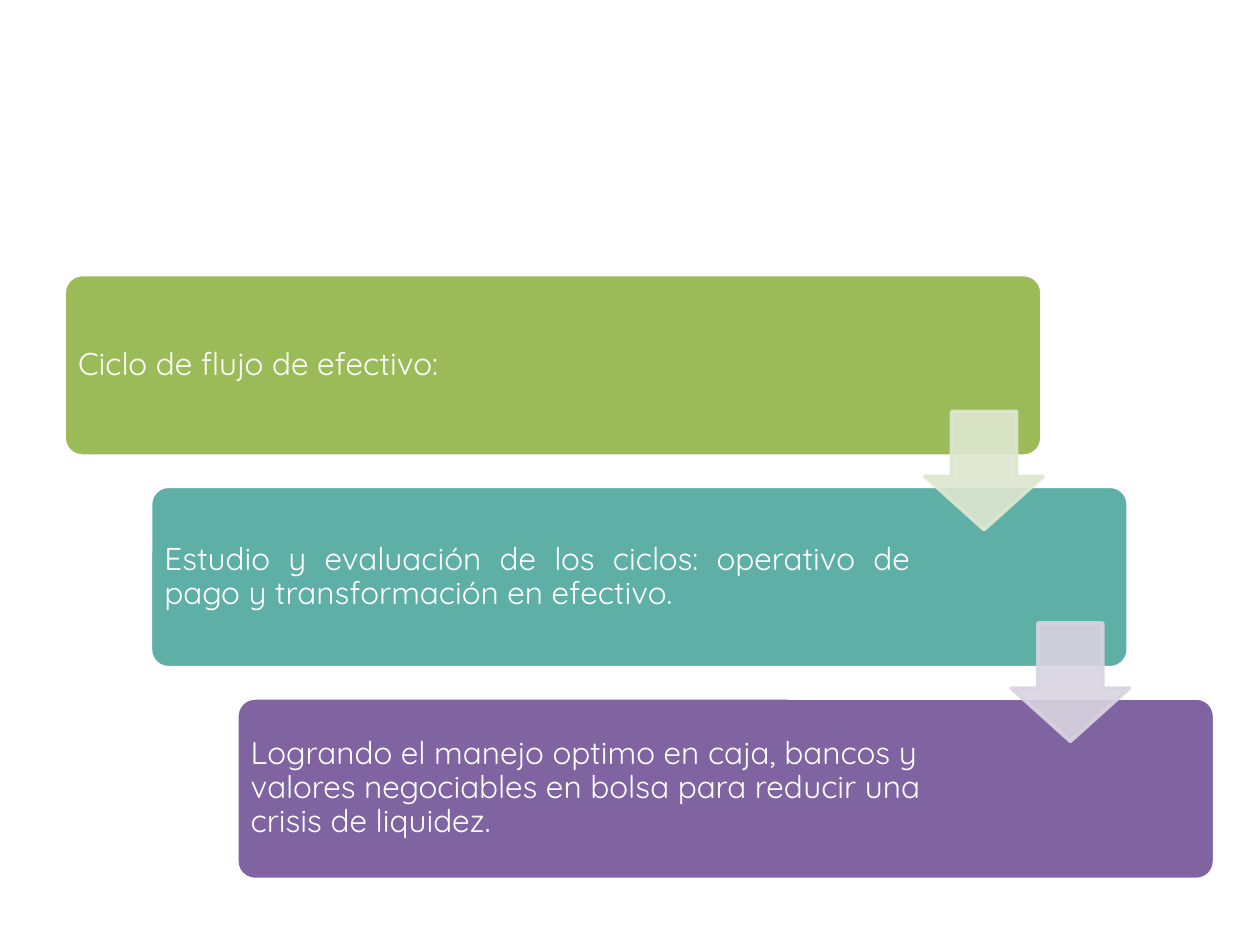
from dataclasses import dataclass

from lxml import etree
from pptx import Presentation
from pptx.dml.color import RGBColor
from pptx.enum.shapes import MSO_SHAPE
from pptx.enum.text import MSO_ANCHOR, PP_ALIGN
from pptx.oxml.ns import qn
from pptx.util import Inches, Pt

ROUNDED = MSO_SHAPE.ROUNDED_RECTANGLE
DOWN_ARROW = MSO_SHAPE.DOWN_ARROW
MIDDLE = MSO_ANCHOR.MIDDLE
LEFT, JUSTIFY = PP_ALIGN.LEFT, PP_ALIGN.JUSTIFY


@dataclass(frozen=True)
class Theme:
    """Colours, type and line sizes of the slide."""
    font: str = "Quicksand"
    size: int = 18
    white: str = "FFFFFF"
    line: int = 2
    steps: tuple = ("9BBB59", "5EAFA6", "8064A2")
    arrows: tuple = ("DEE7D1", "D8D3E0")
    arrow_opacity: int = 90


@dataclass(frozen=True)
class Grid:
    """Staircase grid in inches: first step, shift per step and part sizes."""
    left: float = 0.51
    top: float = 2.18
    dx: float = 0.685
    dy: float = 1.68
    width: float = 7.76
    height: float = 1.44
    pad: float = 0.04
    inset: float = 0.07
    arrow: float = 0.94
    arrow_dx: float = 6.83
    arrow_dy: float = 1.085

    def corner(self, i):
        """Return the top left corner of step i."""
        return self.left + i * self.dx, self.top + i * self.dy


THEME = Theme()
GRID = Grid()
STEPS = (
    ("Ciclo de flujo de efectivo:", 6.21, LEFT),
    ("Estudio y evaluación de los ciclos: operativo de pago y "
     "transformación en efectivo.", 6.06, JUSTIFY),
    ("Logrando el manejo optimo en caja, bancos y valores negociables en "
     "bolsa para reducir una crisis de liquidez.", 6.06, LEFT),
)


def add_block(s, kind, box, adjustments, fill, line):
    """Add a filled and outlined preset shape."""
    sp = s.shapes.add_shape(kind, *map(Inches, box))
    sp.shadow.inherit = False
    for i, value in enumerate(adjustments):
        sp.adjustments[i] = value
    sp.fill.solid()
    sp.fill.fore_color.rgb = RGBColor.from_string(fill)
    sp.line.color.rgb = RGBColor.from_string(line)
    sp.line.width = Pt(THEME.line)
    return sp


def set_opacity(sp, percent):
    """Make the fill and line of a shape partly transparent."""
    for color in sp._element.spPr.iter(qn("a:srgbClr")):
        etree.SubElement(color, qn("a:alpha")).set("val", str(percent * 1000))


def add_label(s, box, text, align):
    """Add a vertically centred text box."""
    tf = s.shapes.add_textbox(*map(Inches, box)).text_frame
    tf.word_wrap = True
    tf.vertical_anchor = MIDDLE
    tf.margin_left = tf.margin_right = Inches(GRID.inset)
    tf.margin_top = tf.margin_bottom = Inches(GRID.inset)
    p = tf.paragraphs[0]
    p.alignment = align
    p.line_spacing = 0.9
    p.space_after = Pt(0.35 * THEME.size)
    r = p.add_run()
    r.text = text
    r.font.name = THEME.font
    r.font.size = Pt(THEME.size)
    r.font.color.rgb = RGBColor.from_string(THEME.white)


def add_step(s, i, text, width, align):
    """Add step i of the staircase with its text."""
    x, y = GRID.corner(i)
    add_block(s, ROUNDED, (x, y, GRID.width, GRID.height), (0.1,),
              THEME.steps[i], THEME.white)
    box = (x + GRID.pad, y + GRID.pad, width, GRID.height - 2 * GRID.pad)
    add_label(s, box, text, align)


def add_arrow(s, i, color):
    """Add the arrow that leads from step i to the next."""
    x, y = GRID.corner(i)
    box = (x + GRID.arrow_dx, y + GRID.arrow_dy, GRID.arrow, GRID.arrow)
    sp = add_block(s, DOWN_ARROW, box, (0.55, 0.45), color, color)
    set_opacity(sp, THEME.arrow_opacity)


def main():
    """Build the slide and save it."""
    prs = Presentation()
    prs.slide_width, prs.slide_height = Inches(10), Inches(7.5)
    s = prs.slides.add_slide(prs.slide_layouts[6])
    for i, step in enumerate(STEPS):
        add_step(s, i, *step)
    for i, color in enumerate(THEME.arrows):
        add_arrow(s, i, color)
    prs.save("out.pptx")


if __name__ == "__main__":
    main()
